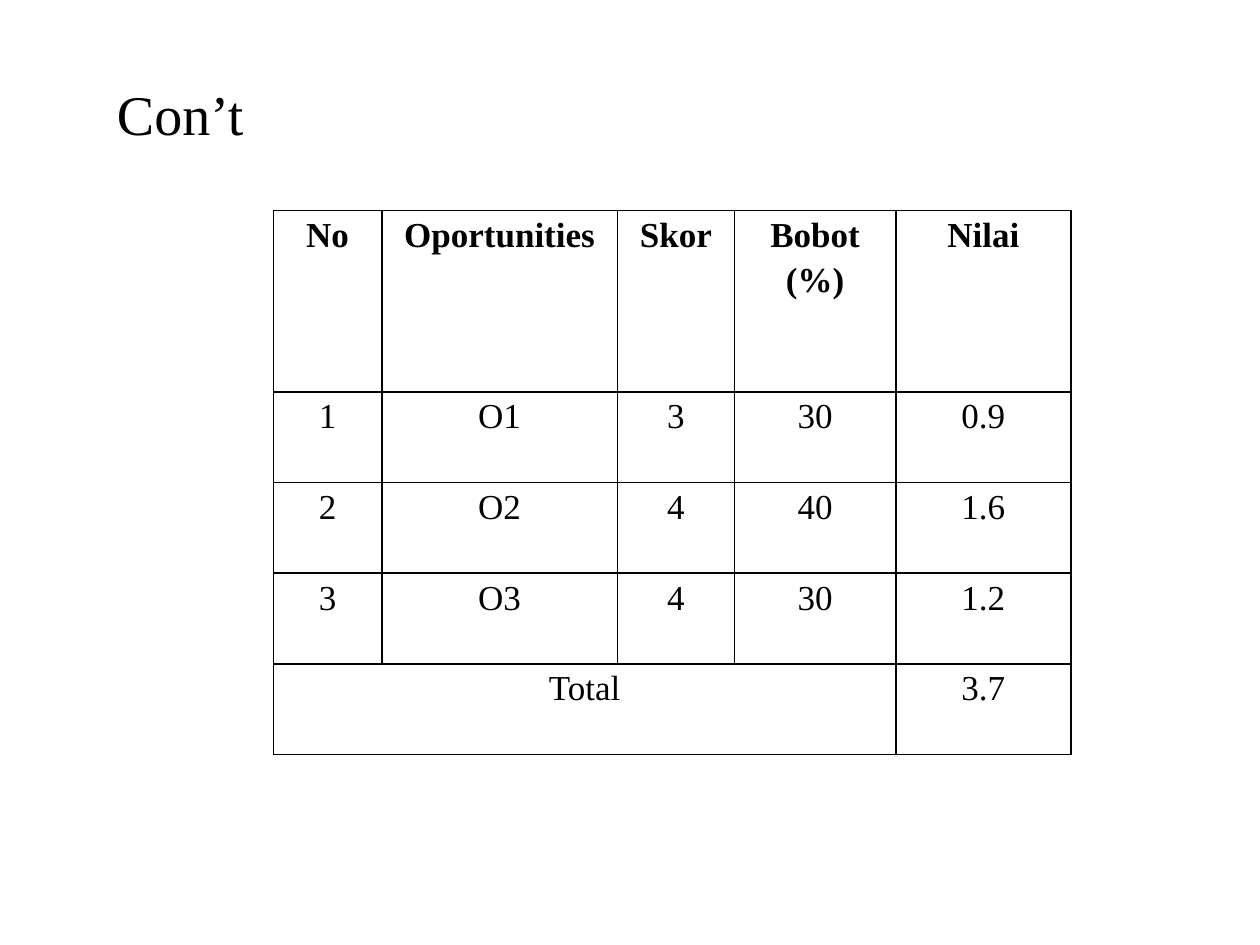
"""Build the slide that scores the opportunities in a weighted table."""
from lxml.etree import fromstring
from pptx import Presentation
from pptx.dml.color import RGBColor
from pptx.enum.text import PP_ALIGN
from pptx.oxml.ns import nsdecls
from pptx.util import Inches, Pt

TITLE = "Con’t"
HEADER = ["No", "Oportunities", "Skor", "Bobot (%)", "Nilai"]
SCORES = [
    ["1", "O1", "3", "30", "0.9"],
    ["2", "O2", "4", "40", "1.6"],
    ["3", "O3", "4", "30", "1.2"],
]
TOTAL = ["Total", "", "", "", "3.7"]
COLUMN_WIDTHS = [0.86, 1.87, 0.93, 1.28, 1.39]
HEADER_HEIGHT, ROW_HEIGHT = 1.44, 0.72

THEME = {
    "font": "Times New Roman",
    "ink": "000000",
    "paper": "FFFFFF",
    "title_size": 32,
    "table_size": 20,
    "border": 1,
}


def style_text(para, size, bold=False):
    font = para.font
    font.name = THEME["font"]
    font.size = Pt(size)
    font.bold = bold
    font.color.rgb = RGBColor.from_string(THEME["ink"])


def add_borders(cell):
    properties = cell._tc.get_or_add_tcPr()
    for position, side in enumerate("LRTB"):
        properties.insert(position, fromstring(
            f'<a:ln{side} {nsdecls("a")} w="{Pt(THEME["border"])}">'
            f'<a:solidFill><a:srgbClr val="{THEME["ink"]}"/></a:solidFill>'
            f'</a:ln{side}>'
        ))


def style_cell(cell, text, bold):
    cell.text_frame.text = text
    cell.margin_left = cell.margin_right = Inches(0.07)
    cell.margin_top = cell.margin_bottom = 0
    cell.fill.solid()
    cell.fill.fore_color.rgb = RGBColor.from_string(THEME["paper"])
    add_borders(cell)
    para = cell.text_frame.paragraphs[0]
    para.alignment = PP_ALIGN.CENTER
    para.line_spacing = 1.15
    style_text(para, THEME["table_size"], bold)


def add_score_table(page):
    rows = [HEADER, *SCORES, TOTAL]
    heights = [HEADER_HEIGHT] + [ROW_HEIGHT] * (len(rows) - 1)
    table = page.shapes.add_table(
        len(rows), len(HEADER), Inches(2.17), Inches(1.67),
        Inches(sum(COLUMN_WIDTHS)), Inches(sum(heights)),
    ).table
    for column, width in zip(table.columns, COLUMN_WIDTHS):
        column.width = Inches(width)
    for row, height, values in zip(table.rows, heights, rows):
        row.height = Inches(height)
        for cell, text in zip(row.cells, values):
            style_cell(cell, text, bold=values is HEADER)
    last = len(rows) - 1
    table.cell(last, 0).merge(table.cell(last, len(HEADER) - 2))


def add_title(page):
    box = page.shapes.add_textbox(Inches(0.83), Inches(0.58), Inches(2.42), Inches(0.64))
    box.text_frame.word_wrap = True
    box.text_frame.text = TITLE
    style_text(box.text_frame.paragraphs[0], THEME["title_size"])


def main():
    deck = Presentation()
    deck.slide_width, deck.slide_height = Inches(10), Inches(7.5)
    page = deck.slides.add_slide(deck.slide_layouts[6])
    add_score_table(page)
    add_title(page)
    deck.save("out.pptx")


if __name__ == "__main__":
    main()
